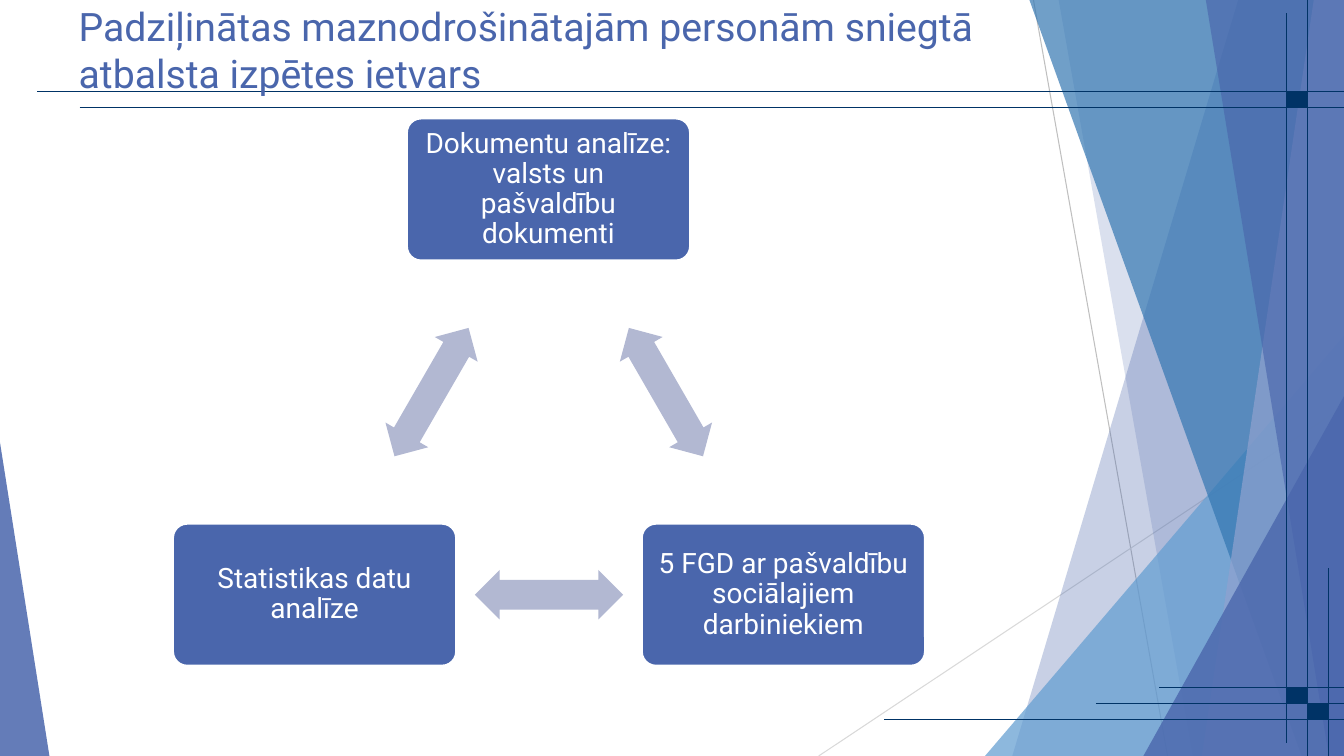
from math import atan2, degrees

from lxml import etree
from pptx import Presentation
from pptx.dml.color import RGBColor
from pptx.enum.shapes import MSO_CONNECTOR, MSO_SHAPE
from pptx.enum.text import MSO_ANCHOR, MSO_AUTO_SIZE, PP_ALIGN
from pptx.oxml.ns import qn
from pptx.util import Inches, Pt

FONT = "Roboto"
BLUE = RGBColor(0x4A, 0x66, 0xAC)
SKY = RGBColor(0x62, 0x9D, 0xD1)
TEAL = RGBColor(0x34, 0x77, 0xB2)
PALE = RGBColor(0x90, 0xA2, 0xCF)
NAVY = RGBColor(0x00, 0x33, 0x66)
ARROW = RGBColor(0xB2, 0xB8, 0xD2)
GREY = RGBColor(0xBF, 0xBF, 0xBF)
LIGHT_GREY = RGBColor(0xD9, 0xD9, 0xD9)
WHITE = RGBColor(0xFF, 0xFF, 0xFF)

W, H = 13.33, 7.5
TITLE = "Padziļinātas maznodrošinātajām personām sniegtā atbalsta izpētes ietvars"

# Text and centre of each box; arrows link each box with the next
BOXES = [
    ("Dokumentu analīze: valsts un pašvaldību dokumenti", 5.44, 1.88),
    ("5 FGD ar pašvaldību sociālajiem darbiniekiem", 7.77, 5.9),
    ("Statistikas datu analīze", 3.12, 5.9),
]
BOX_W, BOX_H = 2.81, 1.41
ARROW_W, ARROW_H = 1.47, 0.49

GREY_LINES = [(10.25, 0, 11.58, H, GREY), (W, 4.03, 8.12, H, LIGHT_GREY)]

# Bands reach the right edge: top-left x, bottom-left x, colour, opacity %
# Triangles reach the bottom: left, top, width, apex, colour, opacity %
DECOR = [
    ("band", 12.28, 10.04, BLUE, 30),
    ("band", 10.5, 11.83, BLUE, 20),
    ("triangle", 9.77, 3.33, 3.56, 1, SKY, 72),
    ("band", 10.21, 12.91, TEAL, 70),
    ("band", 13.03, 11.92, PALE, 70),
    ("band", 11.96, 13.18, BLUE, 65),
    ("triangle", 11.34, 3.93, 1.99, 1, BLUE, 80),
    ("triangle", 0, 4.39, 0.49, 0, BLUE, 85),
]

NAVY_ROWS = [(0.37, 0.91), (0.79, 1.07), (10.87, 6.98), (11.5, 6.82), (8.77, 7.14)]
NAVY_COLUMNS = [(12.97, 0, H), (12.76, 0.13, 7.37), (13.18, 5.64, H)]
NAVY_SQUARES = [(12.76, 0.91), (12.76, 6.82), (12.97, 6.98)]

prs = Presentation()
prs.slide_width, prs.slide_height = Inches(W), Inches(H)
s = prs.slides.add_slide(prs.slide_layouts[5])


def paint(sp, color, opacity=100, line=None, width=0.75):
    sp.shadow.inherit = False
    sp.fill.solid()
    sp.fill.fore_color.rgb = color
    if opacity < 100:
        clr = sp.fill._xPr.find(qn("a:solidFill"))[0]
        etree.SubElement(clr, qn("a:alpha")).set("val", str(opacity * 1000))
    if line is None:
        sp.line.fill.background()
    else:
        sp.line.color.rgb = line
        sp.line.width = Pt(width)


def add_shape(kind, left, top, width, height, *adjustments):
    sp = s.shapes.add_shape(kind, Inches(left), Inches(top), Inches(width), Inches(height))
    for i, value in enumerate(adjustments):
        sp.adjustments[i] = value
    return sp


def add_line(x1, y1, x2, y2, color):
    line = s.shapes.add_connector(
        MSO_CONNECTOR.STRAIGHT, Inches(x1), Inches(y1), Inches(x2), Inches(y2))
    line.line.color.rgb = color
    line.line.width = Pt(0.75)
    etree.SubElement(line.element.spPr, qn("a:effectLst"))


def add_band(top_x, bottom_x):
    corners = [(W, 0), (W, H), (bottom_x, H)]
    outline = s.shapes.build_freeform(Inches(top_x), 0)
    outline.add_line_segments([(Inches(x), Inches(y)) for x, y in corners], close=True)
    return outline.convert_to_shape()


def add_triangle(left, top, width, apex):
    return add_shape(MSO_SHAPE.ISOSCELES_TRIANGLE, left, top, width, H - top, apex)


def add_box(text, cx, cy):
    sp = add_shape(MSO_SHAPE.ROUNDED_RECTANGLE, cx - BOX_W / 2, cy - BOX_H / 2,
                   BOX_W, BOX_H, 0.1)
    paint(sp, BLUE, line=WHITE, width=1.5)
    tf = sp.text_frame
    tf.word_wrap = True
    tf.vertical_anchor = MSO_ANCHOR.MIDDLE
    tf.margin_left = tf.margin_right = tf.margin_top = tf.margin_bottom = Inches(0.12)
    p = tf.paragraphs[0]
    p.text = text
    p.alignment = PP_ALIGN.CENTER
    p.line_spacing = 0.9
    p.font.name, p.font.size, p.font.color.rgb = FONT, Pt(20), WHITE


def add_link(start, end):
    """Centre a double arrow between two boxes, turned along the line joining them."""
    (_, x1, y1), (_, x2, y2) = start, end
    sp = add_shape(MSO_SHAPE.LEFT_RIGHT_ARROW, (x1 + x2 - ARROW_W) / 2,
                   (y1 + y2 - ARROW_H) / 2, ARROW_W, ARROW_H, 0.6, 0.5)
    sp.rotation = round(degrees(atan2(y2 - y1, x2 - x1))) % 360
    paint(sp, ARROW)


for line in GREY_LINES:
    add_line(*line)
for kind, *geometry, color, opacity in DECOR:
    draw = add_band if kind == "band" else add_triangle
    paint(draw(*geometry), color, opacity)

for x, y in NAVY_ROWS:
    add_line(x, y, W, y, NAVY)
for x, top, bottom in NAVY_COLUMNS:
    add_line(x, top, x, bottom, NAVY)
for x, y in NAVY_SQUARES:
    paint(add_shape(MSO_SHAPE.RECTANGLE, x, y, 0.21, 0.16), NAVY, line=NAVY)

title = s.shapes.title
title.left, title.top = Inches(0.68), Inches(-0.03)
title.width, title.height = Inches(9.4), Inches(0.87)
title.element.getparent().append(title.element)  # in front of the decoration
tf = title.text_frame
tf.text = TITLE
tf.word_wrap = True
tf.auto_size = MSO_AUTO_SIZE.NONE
tf.vertical_anchor = MSO_ANCHOR.TOP
p = tf.paragraphs[0]
p.alignment = PP_ALIGN.LEFT
p.font.name, p.font.size, p.font.color.rgb = FONT, Pt(28), BLUE

for i, box in enumerate(BOXES):
    add_box(*box)
    add_link(box, BOXES[(i + 1) % len(BOXES)])

prs.save("out.pptx")
